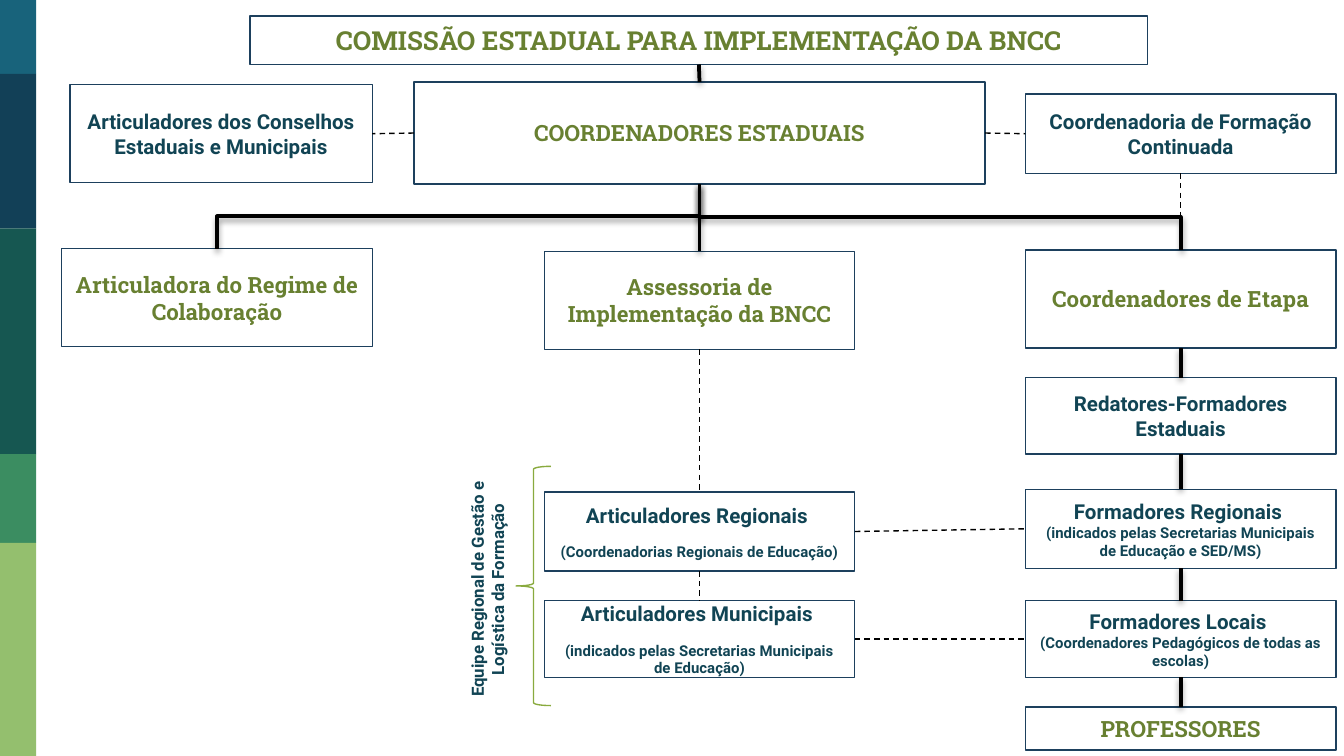
"""Build the organisation chart of the state commission that implements the BNCC."""
import pptx
import pptx.dml.color
import pptx.enum.dml
import pptx.enum.shapes
import pptx.enum.text
import pptx.oxml
import pptx.oxml.ns
import pptx.util

Inches = pptx.util.Inches
Pt = pptx.util.Pt
Shape = pptx.enum.shapes.MSO_SHAPE
Connector = pptx.enum.shapes.MSO_CONNECTOR

THEME = {
    "slab": "Roboto Slab", "sans": "Roboto",
    "green": "688031", "teal": "114454", "border": "1D405D",
    "brace": "89AA3E", "line": "000000",
    "title": 14, "lead": 12, "role": 11, "side": 9, "note": 8, "gap": 8.2,
    "thin": 0.75, "thick": 2, "margin": 0.1,
}
WIDTH = 10
HEIGHT = WIDTH * 9 / 16
COLUMNS = {"left": 0.46, "middle": 4.05, "right": 7.63}
COLUMN = 2.31
STRIP_WIDTH = 0.27
STRIPS = [(0, "18637B"), (0.55, "124057"), (1.7, "165751"), (3.38, "3B8D61"), (4.04, "94BF6E")]

TITLE = ("COMISSÃO ESTADUAL PARA IMPLEMENTAÇÃO DA BNCC", (1.86, 0.12, 6.68, 0.36))
LEADS = {
    "coordenadores": ("COORDENADORES ESTADUAIS", (3.08, 0.61, 4.25, 0.76)),
    "regime": ("Articuladora do Regime de Colaboração", (COLUMNS["left"], 1.85, COLUMN, 0.73)),
    "assessoria": ("Assessoria de Implementação da BNCC", (COLUMNS["middle"], 1.87, COLUMN, 0.73)),
    "etapa": ("Coordenadores de Etapa", (COLUMNS["right"], 1.86, COLUMN, 0.73)),
    "professores": ("PROFESSORES", (COLUMNS["right"], 5.26, COLUMN, 0.32)),
}
ROLES = {
    "conselhos": ("Articuladores dos Conselhos Estaduais e Municipais", (0.52, 0.63, 2.25, 0.73)),
    "formação": ("Coordenadoria de Formação Continuada", (COLUMNS["right"], 0.7, COLUMN, 0.59)),
    "redatores": ("Redatores-Formadores Estaduais", (COLUMNS["right"], 2.81, COLUMN, 0.57)),
    "formadores regionais": ("Formadores Regionais ", (COLUMNS["right"], 3.64, COLUMN, 0.59)),
    "formadores locais": ("Formadores Locais ", (COLUMNS["right"], 4.47, COLUMN, 0.57)),
    "articuladores regionais": ("Articuladores Regionais ", (COLUMNS["middle"], 3.66, COLUMN, 0.59)),
    "articuladores municipais": ("Articuladores Municipais ", (COLUMNS["middle"], 4.47, COLUMN, 0.57)),
}
NOTES = {
    "formadores regionais": ("(indicados pelas Secretarias Municipais de Educação e SED/MS)", 0),
    "formadores locais": ("(Coordenadores Pedagógicos de todas as escolas)", 0),
    "articuladores regionais": ("(Coordenadorias Regionais de Educação)", THEME["gap"]),
    "articuladores municipais": ("(indicados pelas Secretarias Municipais de Educação)", THEME["gap"]),
}
SIDE_LABEL = ("Equipe Regional de Gestão e Logística da Formação", (2.58, 4.21, 2.09, 0.35))
BRACE = (3.84, 3.47, 0.26, 1.78)

TOP, LEFT, BOTTOM, RIGHT = range(4)
COMMAND_LINES = [
    ("título", "coordenadores"), ("coordenadores", "assessoria"), ("etapa", "redatores"),
    ("redatores", "formadores regionais"), ("formadores regionais", "formadores locais"),
    ("formadores locais", "professores"),
]
SUPPORT_LINES = [
    ("coordenadores", LEFT, "conselhos", RIGHT),
    ("coordenadores", RIGHT, "formação", LEFT),
    ("formação", BOTTOM, "etapa", TOP),
    ("assessoria", BOTTOM, "articuladores regionais", TOP),
    ("articuladores regionais", BOTTOM, "articuladores municipais", TOP),
    ("articuladores regionais", RIGHT, "formadores regionais", LEFT),
    ("articuladores municipais", RIGHT, "formadores locais", LEFT),
]
BRANCHES = ["regime", "etapa"]
SHADOW = (
    '<a:outerShdw blurRad="40000" dist="20000" dir="5400000" rotWithShape="0">'
    '<a:srgbClr val="000000"><a:alpha val="38000"/></a:srgbClr></a:outerShdw>'
)


def color(name):
    return pptx.dml.color.RGBColor.from_string(THEME.get(name, name))


def place(shape, box):
    shape.left, shape.top, shape.width, shape.height = map(Inches, box)


def write(shape, text, font, size, ink, note=None):
    frame = shape.text_frame
    frame.word_wrap = True
    frame.auto_size = pptx.enum.text.MSO_AUTO_SIZE.NONE
    frame.vertical_anchor = pptx.enum.text.MSO_ANCHOR.MIDDLE
    frame.margin_left = frame.margin_right = Inches(THEME["margin"])
    frame.margin_top = frame.margin_bottom = Inches(THEME["margin"])
    frame.text = text
    sizes = [THEME[size]]
    if note:
        paragraph = frame.add_paragraph()
        paragraph.text, gap = note
        paragraph.space_before = Pt(gap)
        sizes.append(THEME["note"])
    for paragraph, points in zip(frame.paragraphs, sizes):
        paragraph.alignment = pptx.enum.text.PP_ALIGN.CENTER
        for run in paragraph.runs:
            run.font.name, run.font.size, run.font.bold = THEME[font], Pt(points), True
            run.font.color.rgb = color(ink)


def outline(shape, ink):
    shape.line.color.rgb = color(ink)
    shape.line.width = Pt(THEME["thin"])


def add_box(slide, box):
    shape = slide.shapes.add_shape(Shape.RECTANGLE, *map(Inches, box))
    shape.shadow.inherit = False
    shape.fill.background()
    outline(shape, "border")
    return shape


def connect(slide, start, start_side, end, end_side, command, kind=Connector.STRAIGHT):
    connector = slide.shapes.add_connector(kind, 0, 0, 0, 0)
    connector.begin_connect(start, start_side)
    connector.end_connect(end, end_side)
    connector.line.color.rgb = color("line")
    connector.line.width = Pt(THEME["thick" if command else "thin"])
    if not command:
        connector.line.dash_style = pptx.enum.dml.MSO_LINE.DASH
    effects = f'<a:effectLst {pptx.oxml.ns.nsdecls("a")}>{SHADOW if command else ""}</a:effectLst>'
    connector._element.spPr.append(pptx.oxml.parse_xml(effects))
    return connector


def branch(slide, start, end):
    connector = connect(slide, start, BOTTOM, end, TOP, True, Connector.ELBOW)
    left, top, span, drop = connector.left, connector.top, connector.width, connector.height
    connector.left, connector.top = left + (span - drop) // 2, top + (drop - span) // 2
    connector.width, connector.height = drop, span
    to_right = end.left > start.left
    frame = connector._element.spPr.find(pptx.oxml.ns.qn("a:xfrm"))
    frame.set("rot", str((270 if to_right else 90) * 60000))
    frame.set("flipH", str(int(to_right)))


def main():
    presentation = pptx.Presentation()
    presentation.slide_width, presentation.slide_height = Inches(WIDTH), Inches(HEIGHT)
    slide = presentation.slides.add_slide(presentation.slide_layouts[5])

    bottoms = [top for top, _ in STRIPS[1:]] + [HEIGHT]
    for (top, fill), bottom in zip(STRIPS, bottoms):
        strip = add_box(slide, (0, top, STRIP_WIDTH, bottom - top))
        strip.fill.solid()
        strip.fill.fore_color.rgb = color(fill)
        strip.line.fill.background()

    title = slide.shapes.title
    place(title, TITLE[1])
    outline(title, "border")
    write(title, TITLE[0], "slab", "title", "green")

    boxes = {"título": title}
    for name, (text, box) in LEADS.items():
        boxes[name] = add_box(slide, box)
        write(boxes[name], text, "slab", "lead", "green")
    for name, (text, box) in ROLES.items():
        boxes[name] = add_box(slide, box)
        write(boxes[name], text, "sans", "role", "teal", NOTES.get(name))

    brace = slide.shapes.add_shape(Shape.LEFT_BRACE, *map(Inches, BRACE))
    brace.shadow.inherit = False
    brace.fill.background()
    outline(brace, "brace")
    label = slide.shapes.add_textbox(*map(Inches, SIDE_LABEL[1]))
    label.rotation = 270
    write(label, SIDE_LABEL[0], "sans", "side", "teal")

    for start, end in COMMAND_LINES:
        connect(slide, boxes[start], BOTTOM, boxes[end], TOP, True)
    for end in BRANCHES:
        branch(slide, boxes["coordenadores"], boxes[end])
    for start, start_side, end, end_side in SUPPORT_LINES:
        connect(slide, boxes[start], start_side, boxes[end], end_side, False)

    presentation.save("out.pptx")


if __name__ == "__main__":
    main()
